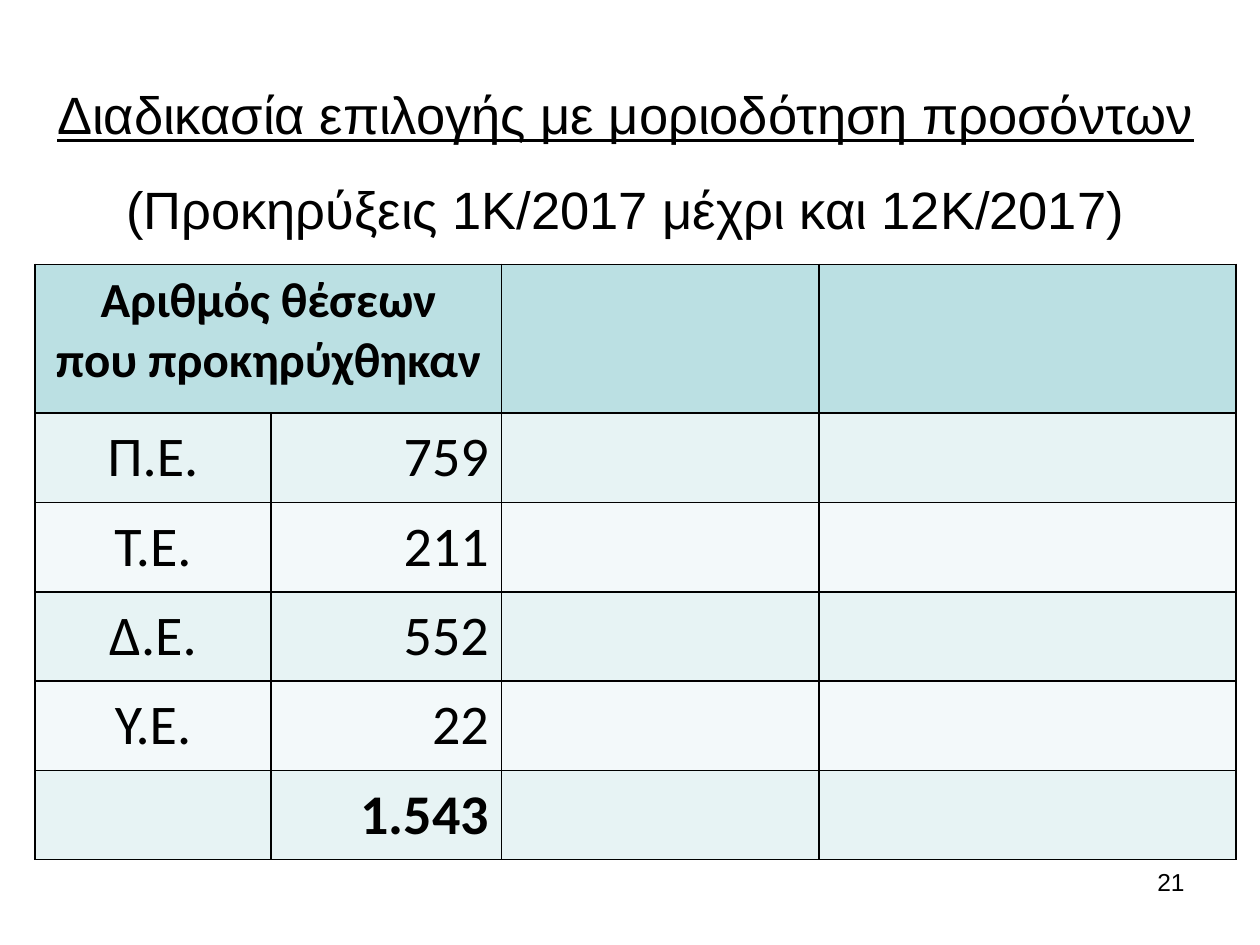
from pptx import Presentation
from pptx.util import Cm, Pt
from pptx.dml.color import RGBColor as RGB
from pptx.enum.text import PP_ALIGN as AL, MSO_ANCHOR as ANC
from pptx.oxml.ns import qn
from lxml.etree import SubElement as Sub

HUES = {"ink": "000000", "head": "BBE0E3", "odd": "E7F3F4", "even": "F3F9FA"}
COLS = [4.75, 4.65, 6.4, 8.41]
ROWS = [3.0] + [1.8] * 5
HEAD = ["Αριθμός θέσεων", "που προκηρύχθηκαν"]
DATA = [("Π.Ε.", "759"), ("Τ.Ε.", "211"), ("Δ.Ε.", "552"),
        ("Υ.Ε.", "22"), ("", "1.543")]


def write(para, text, size=32, face="Calibri", align=AL.CENTER,
          bold=False, under=False):
    para.alignment = align
    run = para.add_run()
    run.text = text
    font = run.font
    font.size, font.name = Pt(size), face
    font.bold, font.underline = bold, under
    font.color.rgb = RGB.from_string(HUES["ink"])


def add_box(slide, *place, anchor=ANC.TOP):
    frame = slide.shapes.add_textbox(*map(Cm, place)).text_frame
    frame.word_wrap = True
    frame.vertical_anchor = anchor
    return frame.paragraphs[0]


def style(cell, hue):
    props = cell._tc.get_or_add_tcPr()
    for side in "LRTB":
        line = Sub(props, qn(f"a:ln{side}"), w=str(Pt(1)))
        fill = Sub(line, qn("a:solidFill"))
        Sub(fill, qn("a:srgbClr"), val=HUES["ink"])
    cell.fill.solid()
    cell.fill.fore_color.rgb = RGB.from_string(HUES[hue])


def add_title(slide):
    para = add_box(slide, 0.71, 1.12, 23.8, 3.61, anchor=ANC.MIDDLE)
    para.line_spacing = 1.5
    para.space_after = Pt(12)
    form = {"size": 30, "face": "Arial"}
    write(para, "Διαδικασία επιλογής με μοριοδότηση προσόντων",
          under=True, **form)
    para.add_line_break()
    write(para, "(Προκηρύξεις 1Κ/2017 μέχρι και 12Κ/2017)", **form)


def add_grid(slide):
    grid = slide.shapes.add_table(
        len(ROWS), len(COLS), Cm(0.71), Cm(5.33),
        Cm(sum(COLS)), Cm(sum(ROWS))).table
    for col, width in zip(grid.columns, COLS):
        col.width = Cm(width)
    for i, (row, height) in enumerate(zip(grid.rows, ROWS)):
        row.height = Cm(height)
        hue = "head" if i == 0 else "odd" if i % 2 else "even"
        for cell in row.cells:
            style(cell, hue)

    top = grid.cell(0, 0)
    top.merge(grid.cell(0, 1))
    frame = top.text_frame
    frame.text = "\n".join([""] * len(HEAD))
    for para, text in zip(frame.paragraphs, HEAD):
        write(para, text, size=28, bold=True)

    for i, pair in enumerate(DATA, 1):
        for j, (text, align) in enumerate(zip(pair, (AL.CENTER, AL.RIGHT))):
            if text:
                cell = grid.cell(i, j)
                cell.vertical_anchor = ANC.MIDDLE
                write(cell.text_frame.paragraphs[0], text, align=align,
                      bold=i == len(DATA))


def main():
    deck = Presentation()
    deck.slide_width, deck.slide_height = Cm(25.4), Cm(19.05)
    slide = deck.slides.add_slide(deck.slide_layouts[6])
    add_title(slide)
    add_grid(slide)
    write(add_box(slide, 18.21, 17.35, 5.92, 1.32), "21",
          size=14, face="Arial", align=AL.RIGHT)
    deck.save("out.pptx")


if __name__ == "__main__":
    main()
